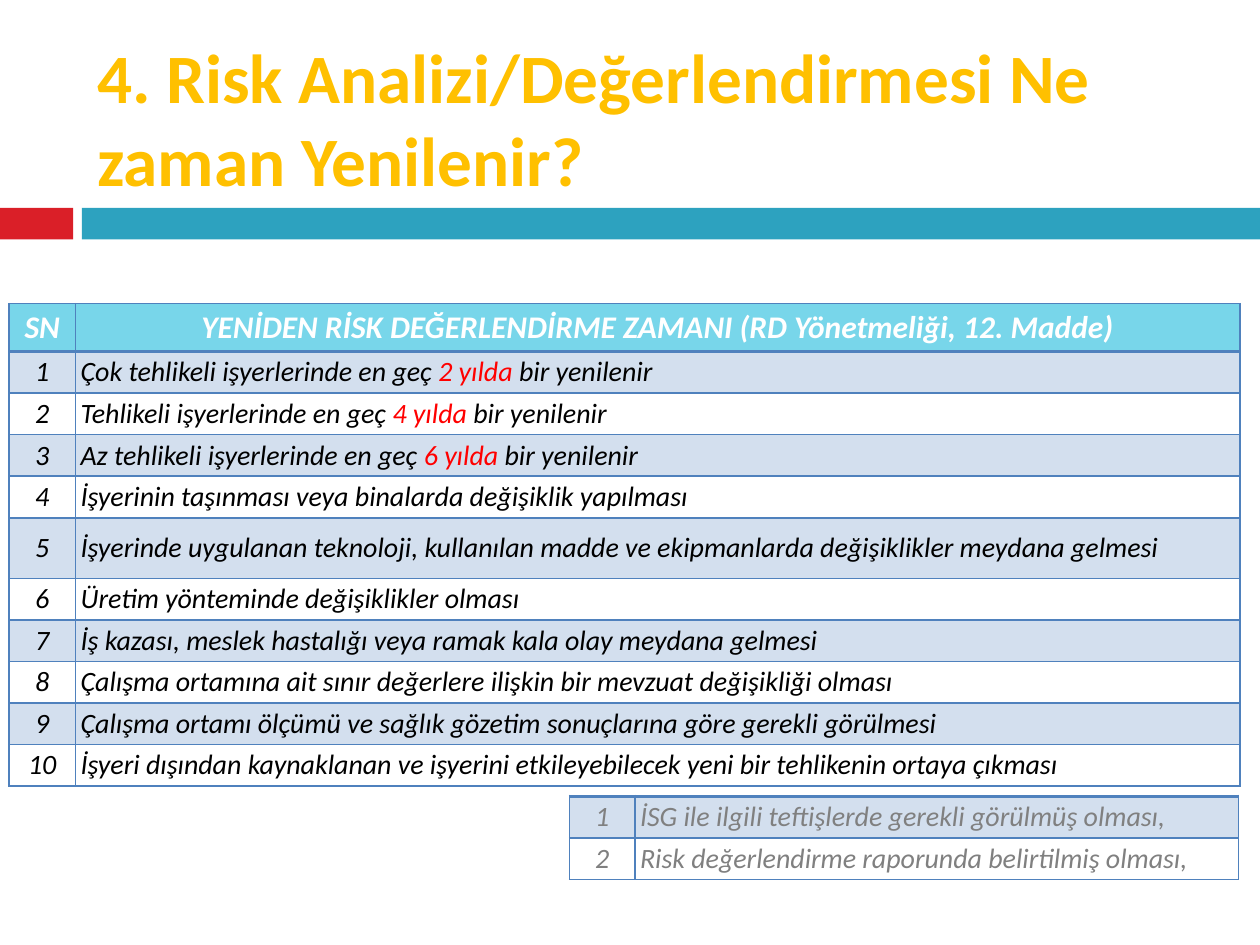
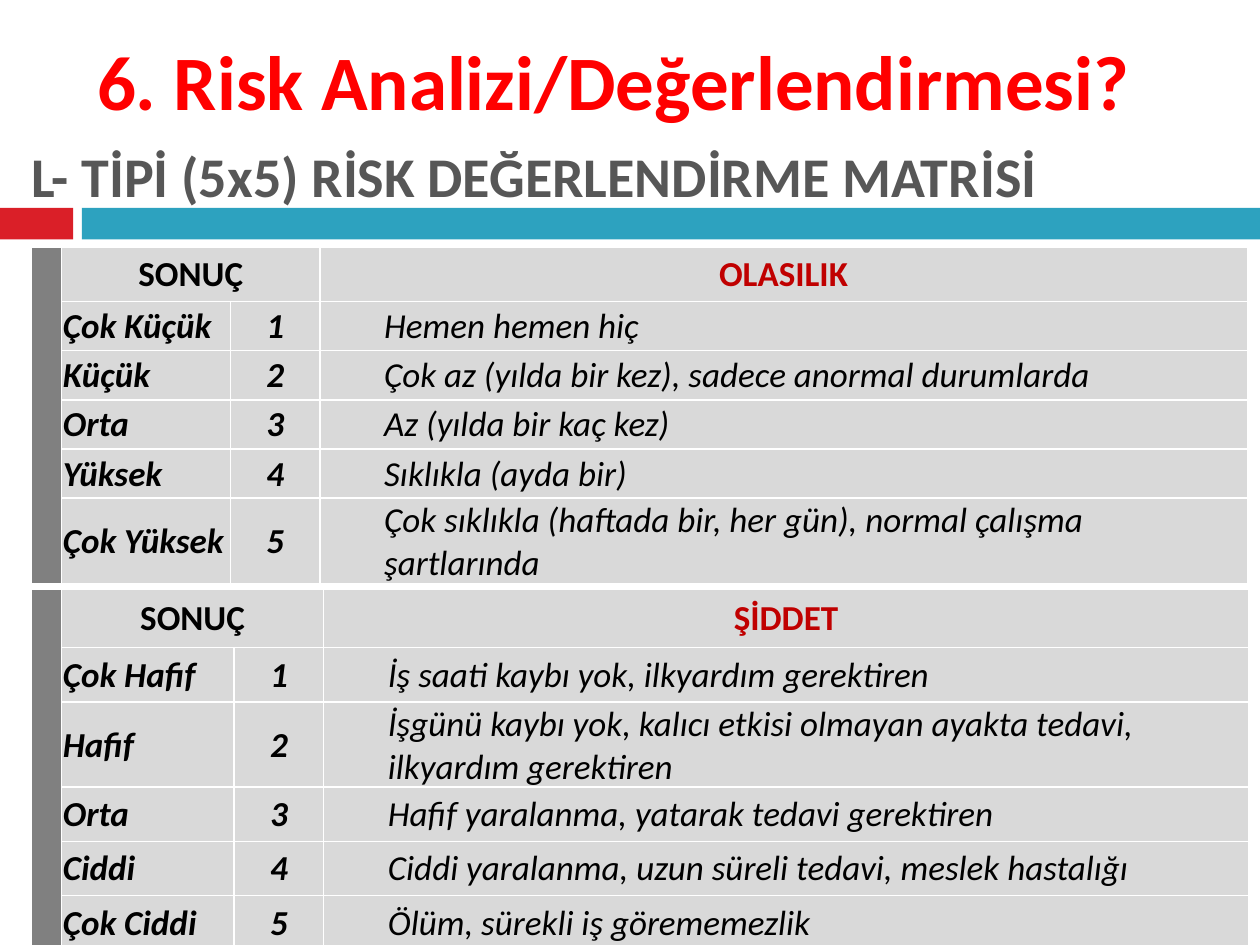
from lxml.etree import SubElement
from pptx import Presentation
from pptx.dml.color import RGBColor
from pptx.enum.shapes import MSO_SHAPE
from pptx.enum.text import MSO_ANCHOR, MSO_AUTO_SIZE, PP_ALIGN
from pptx.oxml.ns import qn
from pptx.util import Inches, Pt

FONT = "Calibri"
HUES = {
    "red": "DA1F28", "teal": "2DA2BF", "gold": "FFC000", "alert": "FF0000",
    "slate": "575757", "black": "000000", "white": "FFFFFF", "gray": "808080",
    "blue": "4F81BD", "sky": "78D6EA", "pale": "D3DFEE",
    "silver": "D9D9D9", "wine": "C00000",
}
CENTER = PP_ALIGN.CENTER

REASONS = [
    "Çok tehlikeli işyerlerinde en geç |2 yılda |bir yenilenir",
    "Tehlikeli işyerlerinde en geç |4 yılda |bir yenilenir",
    "Az tehlikeli işyerlerinde en geç |6 yılda |bir yenilenir",
    "İşyerinin taşınması veya binalarda değişiklik yapılması",
    "İşyerinde uygulanan teknoloji, kullanılan madde ve ekipmanlarda "
    "değişiklikler meydana gelmesi",
    "Üretim yönteminde değişiklikler olması",
    "İş kazası, meslek hastalığı veya ramak kala olay meydana gelmesi",
    "Çalışma ortamına ait sınır değerlere ilişkin bir mevzuat değişikliği olması",
    "Çalışma ortamı ölçümü ve sağlık gözetim sonuçlarına göre gerekli görülmesi",
    "İşyeri dışından kaynaklanan ve işyerini etkileyebilecek yeni bir "
    "tehlikenin ortaya çıkması",
]
EXTRAS = [
    "İSG ile ilgili teftişlerde gerekli görülmüş olması,",
    "Risk değerlendirme raporunda belirtilmiş olması,",
]
ODDS = [
    ("Çok Küçük", "Hemen hemen hiç"),
    ("Küçük", "Çok az (yılda bir kez), sadece anormal durumlarda"),
    ("Orta", "Az (yılda bir kaç kez)"),
    ("Yüksek", "Sıklıkla (ayda bir)"),
    ("Çok Yüksek", "Çok sıklıkla (haftada bir, her gün), normal çalışma şartlarında"),
]
HARM = [
    ("Çok Hafif", "İş saati kaybı yok, ilkyardım gerektiren"),
    ("Hafif", "İşgünü kaybı yok, kalıcı etkisi olmayan ayakta tedavi, "
              "ilkyardım gerektiren"),
    ("Orta", "Hafif yaralanma, yatarak tedavi gerektiren"),
    ("Ciddi", "Ciddi yaralanma, uzun süreli tedavi, meslek hastalığı"),
    ("Çok Ciddi", "Ölüm, sürekli iş görememezlik"),
]


def color(name):
    return RGBColor.from_string(HUES[name])


def write(frame, text, size=16, hue="black", bold=False, italic=False,
          align=PP_ALIGN.LEFT, space=None, indent=0):
    """Fill the frame; every second piece between bars is shown in red."""
    par = frame.paragraphs[0]
    par.alignment = align
    if space:
        par.line_spacing = space
    if indent:
        props = par._p.get_or_add_pPr()
        props.set("marL", str(Inches(indent)))
        props.set("indent", "0")
    for i, part in enumerate(text.split("|")):
        run = par.add_run()
        run.text = part
        font = run.font
        font.name, font.size = FONT, Pt(size)
        font.bold, font.italic = bold, italic
        font.color.rgb = color("alert" if i % 2 else hue)


class Deck:
    def __init__(self):
        self.show = Presentation()
        self.show.slide_width = Inches(10)
        self.show.slide_height = Inches(7.5)
        self.slide = None

    def page(self, title, top, size, hue):
        """Start a slide with its two bands and its title."""
        self.slide = self.show.slides.add_slide(self.show.slide_layouts[5])
        self.band(0, 0.58, "red")
        self.band(0.65, 9.35, "teal")
        head = self.slide.shapes.title
        head.left, head.top = Inches(0.67), Inches(top)
        head.width, head.height = Inches(8.92), Inches(1.47)
        frame = head.text_frame
        frame.auto_size = MSO_AUTO_SIZE.NONE
        frame.vertical_anchor = MSO_ANCHOR.BOTTOM
        write(frame, title, size=size, hue=hue, bold=True)

    def band(self, left, width, hue):
        bar = self.slide.shapes.add_shape(
            MSO_SHAPE.RECTANGLE, Inches(left), Inches(1.65),
            Inches(width), Inches(0.25))
        bar.shadow.inherit = False
        bar.fill.solid()
        bar.fill.fore_color.rgb = color(hue)
        bar.line.fill.background()

    def label(self, text, left, top, width, height, **form):
        box = self.slide.shapes.add_textbox(
            Inches(left), Inches(top), Inches(width), Inches(height))
        frame = box.text_frame
        frame.word_wrap = True
        frame.vertical_anchor = MSO_ANCHOR.MIDDLE
        frame.margin_left = frame.margin_right = 0
        write(frame, text, **form)

    def grid(self, left, top, cols, rows):
        table = self.slide.shapes.add_table(
            len(rows), len(cols), Inches(left), Inches(top),
            Inches(sum(cols)), Inches(sum(rows))).table
        table.first_row = table.horz_banding = False
        for col, width in zip(table.columns, cols):
            col.width = Inches(width)
        for row, height in zip(table.rows, rows):
            row.height = Inches(height)
        return table

    def cell(self, cell, fill, edge, pads, text="", thick=(), **form):
        """Style one cell; thick names the sides with a heavy border."""
        props = cell._tc.get_or_add_tcPr()
        for side in "LRTB":
            line = SubElement(props, qn("a:ln" + side),
                              w=str(Pt(2.25 if side in thick else 1)))
            paint = SubElement(line, qn("a:solidFill"))
            SubElement(paint, qn("a:srgbClr"), val=HUES[edge])
        cell.fill.solid()
        cell.fill.fore_color.rgb = color(fill)
        cell.vertical_anchor = MSO_ANCHOR.MIDDLE
        (cell.margin_left, cell.margin_top,
         cell.margin_right, cell.margin_bottom) = map(Inches, pads)
        if text:
            write(cell.text_frame, text, **form)

    def roster(self, left, top, cols, rows, items, hue="black", head=None):
        """Numbered list table with striped rows and an optional header."""
        table = self.grid(left, top, cols, rows)
        lines = [(str(n), item) for n, item in enumerate(items, 1)]
        first = 0
        if head:
            lines.insert(0, head)
            first = 1
        for r, line in enumerate(lines):
            top_row = r < first
            form = dict(size=18, hue="white", bold=True) if top_row else dict(hue=hue)
            fill = "sky" if top_row else ("pale", "white")[(r - first) % 2]
            thick = "B" if top_row else "T" if r == first else ""
            for c, text in enumerate(line):
                pad = (0.07, 0.04)[c]
                align = CENTER if top_row or c == 0 else PP_ALIGN.LEFT
                self.cell(table.cell(r, c), fill, "blue", (pad, 0, pad, 0), text,
                          thick, italic=True, align=align, **form)

    def scale(self, top, cols, rows, name, items):
        """Five-step rating table with a merged side strip and header."""
        table = self.grid(0.25, top, cols, rows)
        lines = [("", "SONUÇ", "", name)]
        lines += [("", level, str(n), note)
                  for n, (level, note) in enumerate(items, 1)]
        for r, line in enumerate(lines):
            for c, text in enumerate(line):
                if r == 0:
                    pads = (0.1, 0.05, 0.1, 0.05)
                    form = dict(bold=True, align=CENTER,
                                hue="wine" if c == 3 else "black")
                else:
                    pads = (0.01, 0.01, 0.01, 0)
                    form = dict(bold=c < 3, italic=True,
                                align=CENTER if c == 2 else PP_ALIGN.LEFT,
                                indent=0.5 if c == 3 else 0)
                self.cell(table.cell(r, c), "silver" if c else "gray", "white",
                          pads, text, size=20, **form)
        table.cell(0, 0).merge(table.cell(len(lines) - 1, 0))
        table.cell(0, 1).merge(table.cell(0, 2))


def main():
    deck = Deck()
    deck.page("4. Risk Analizi/Değerlendirmesi Ne zaman Yenilenir?",
              0.17, 39.6, "gold")
    deck.roster(0.07, 2.41, [0.53, 9.24],
                [0.38] + [0.33] * 4 + [0.48] + [0.33] * 5, REASONS,
                head=("SN", "YENİDEN RİSK DEĞERLENDİRME ZAMANI "
                            "(RD Yönetmeliği, 12. Madde)"))
    deck.roster(4.52, 6.32, [0.52, 4.79], [0.33] * 2, EXTRAS, hue="gray")

    deck.page("6. Risk Analizi/Değerlendirmesi?", -0.42, 44, "alert")
    deck.label("L- TİPİ (5x5) RİSK DEĞERLENDİRME MATRİSİ", 0.25, 1.07, 9.64, 0.71,
               size=32, hue="slate", bold=True, space=0.9)
    deck.scale(1.96, [0.23, 1.34, 0.71, 7.36], [0.43] + [0.39] * 5,
               "OLASILIK", ODDS)
    deck.scale(4.68, [0.23, 1.37, 0.71, 7.34], [0.46] + [0.43] * 5,
               "ŞİDDET", HARM)
    deck.show.save("out.pptx")


if __name__ == "__main__":
    main()
